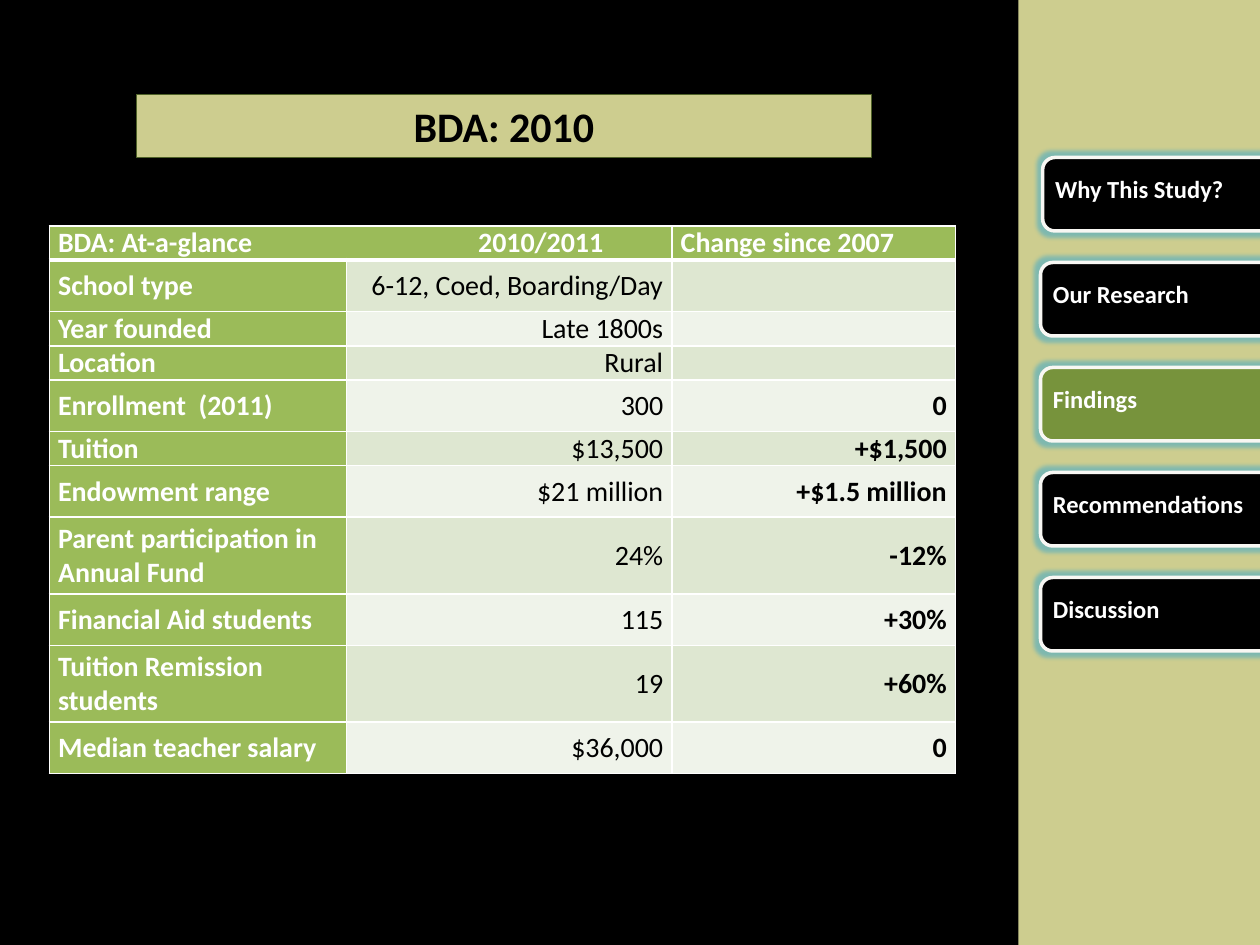
from dataclasses import dataclass

from lxml.etree import SubElement
from pptx import Presentation
from pptx.dml.color import RGBColor
from pptx.enum.shapes import MSO_SHAPE as Shape
from pptx.enum.text import MSO_ANCHOR as Anchor, MSO_AUTO_SIZE as AutoSize, PP_ALIGN as Align
from pptx.oxml.ns import qn
from pptx.util import Inches, Pt


@dataclass(frozen=True)
class Theme:
    font: str = "Calibri"
    dark: str = "000000"
    light: str = "FFFFFF"
    sand: str = "CDCD8F"
    title_line: str = "4F6228"
    button_line: str = "F8F7F3"
    active: str = "77933C"
    glow: str = "4BACC6"
    header: str = "9BBB59"
    bands: tuple = ("DEE7D1", "EFF3EA")
    title_size: int = 24
    table_size: int = 16
    label_size: int = 14


def grid(count):
    """Length of a number of grid units; the slide is 120 columns by 90 rows."""
    return Inches(count / 12)


class SlideBuilder:
    def __init__(self, slide, theme):
        self.slide = slide
        self.theme = theme
        fill = slide.background.fill
        fill.solid()
        fill.fore_color.rgb = RGBColor.from_string(theme.dark)

    def add_text(self, frame, text, size, color, bold=True, align=Align.LEFT):
        para = frame.paragraphs[0]
        para.alignment = align
        span = para.add_run()
        span.text = text
        span.font.name = self.theme.font
        span.font.size = Pt(size)
        span.font.bold = bold
        span.font.color.rgb = RGBColor.from_string(color)
        return para

    def box(self, kind, at, fill, line=None, width=0.75):
        box = self.slide.shapes.add_shape(kind, *map(grid, at))
        box.shadow.inherit = False
        box.fill.solid()
        box.fill.fore_color.rgb = RGBColor.from_string(fill)
        if line:
            box.line.color.rgb = RGBColor.from_string(line)
            box.line.width = Pt(width)
        else:
            box.line.fill.background()
        return box

    def title(self, at, text):
        box = self.box(Shape.RECTANGLE, at, self.theme.sand, self.theme.title_line)
        box.text_frame.word_wrap = True
        self.add_text(box.text_frame, text, self.theme.title_size, self.theme.dark, align=Align.CENTER)

    def button(self, left, top, text, fill):
        box = self.box(Shape.ROUNDED_RECTANGLE, (left, top, 23, 7), fill, self.theme.button_line, 2)
        effects = box._element.spPr.find(qn("a:effectLst"))
        glow = SubElement(effects, qn("a:glow"), rad=str(Pt(5)))
        color = SubElement(glow, qn("a:srgbClr"), val=self.theme.glow)
        SubElement(color, qn("a:alpha"), val="60000")
        label = self.slide.shapes.add_textbox(*map(grid, (left, top + 1, 21, 4.1)))
        frame = label.text_frame
        frame.word_wrap = True
        frame.auto_size = AutoSize.SHAPE_TO_FIT_TEXT
        self.add_text(frame, text, self.theme.label_size, self.theme.light)

    def borders(self, cell, top, bottom):
        props = cell._tc.get_or_add_tcPr()
        for index, (side, width) in enumerate((("L", 1), ("R", 1), ("T", top), ("B", bottom))):
            line = props.makeelement(qn(f"a:ln{side}"), {"w": str(Pt(width))})
            fill = SubElement(line, qn("a:solidFill"))
            SubElement(fill, qn("a:srgbClr"), val=self.theme.light)
            props.insert(index, line)

    def cell(self, cell, text, fill, color, bold, align, top, bottom):
        cell.vertical_anchor = Anchor.MIDDLE
        cell.margin_left = cell.margin_right = Inches(0.07)
        cell.margin_top = cell.margin_bottom = 0
        cell.fill.solid()
        cell.fill.fore_color.rgb = RGBColor.from_string(fill)
        self.borders(cell, top, bottom)
        if text:
            return self.add_text(cell.text_frame, text, self.theme.table_size, color, bold, align)
        # An empty cell still needs the table's type size to keep its row low
        para = cell.text_frame.paragraphs[0]
        SubElement(para._p, qn("a:endParaRPr"), sz=str(self.theme.table_size * 100))
        return para

    def table(self, left, top, widths, heights, header, rows):
        theme = self.theme
        frame = self.slide.shapes.add_table(
            len(heights), len(widths), *map(grid, (left, top, sum(widths), sum(heights))))
        table = frame.table
        for column, width in zip(table.columns, widths):
            column.width = grid(width)
        for row, height in zip(table.rows, heights):
            row.height = grid(height)

        # Header: the first two columns share one cell with a tab between its parts
        table.cell(0, 0).merge(table.cell(0, 1))
        for index, text in enumerate(header):
            para = self.cell(table.cell(0, index), text, theme.header, theme.light,
                             True, Align.LEFT, 1, 3)
            if "\t" in text:
                tabs = SubElement(para._p.get_or_add_pPr(), qn("a:tabLst"))
                SubElement(tabs, qn("a:tab"), pos=str(grid(40)), algn="l")

        # Body: green row names, then values on alternating bands
        for number, row in enumerate(rows, start=1):
            band = theme.bands[(number - 1) % 2]
            looks = ((theme.header, theme.light, True, Align.LEFT),
                     (band, theme.dark, False, Align.RIGHT),
                     (band, theme.dark, True, Align.RIGHT))
            for index, (text, look) in enumerate(zip(row, looks)):
                self.cell(table.cell(number, index), text, *look, 3 if number == 1 else 1, 1)


HEADER = ("BDA: At-a-glance\t2010/2011", "", "Change since 2007")
FACTS = (
    ("School type", "6-12, Coed, Boarding/Day", ""),
    ("Year founded", "Late 1800s", ""),
    ("Location", "Rural", ""),
    ("Enrollment  (2011)", "300", "0"),
    ("Tuition", "$13,500", "+$1,500"),
    ("Endowment range", "$21 million", "+$1.5 million"),
    ("Parent participation in Annual Fund", "24%", "-12%"),
    ("Financial Aid students", "115", "+30%"),
    ("Tuition Remission students", "19", "+60%"),
    ("Median teacher salary", "$36,000", "0"),
)
LOW, MID, TALL = 2.5, 4.9, 7.3
ROW_HEIGHTS = (LOW, MID, LOW, LOW, MID, LOW, MID, TALL, MID, TALL, MID)
SECTIONS = ("Why This Study?", "Our Research", "Findings", "Recommendations", "Discussion")
CURRENT = "Findings"


def main():
    deck = Presentation()
    deck.slide_width, deck.slide_height = grid(120), grid(90)
    theme = Theme()
    page = SlideBuilder(deck.slides.add_slide(deck.slide_layouts[6]), theme)

    # Title and facts table
    page.title((13, 9, 70, 6), "BDA: 2010")
    page.table(4.7, 21.5, (28.3, 31, 27), ROW_HEIGHTS, HEADER, FACTS)

    # Navigation panel; the first button sits slightly to the right
    page.box(Shape.RECTANGLE, (97, 0, 23, 90), theme.sand)
    for index, section in enumerate(SECTIONS):
        fill = theme.active if section == CURRENT else theme.dark
        page.button(99.1 if index else 99.3, 15 + 10 * index, section, fill)

    deck.save("out.pptx")


if __name__ == "__main__":
    main()
